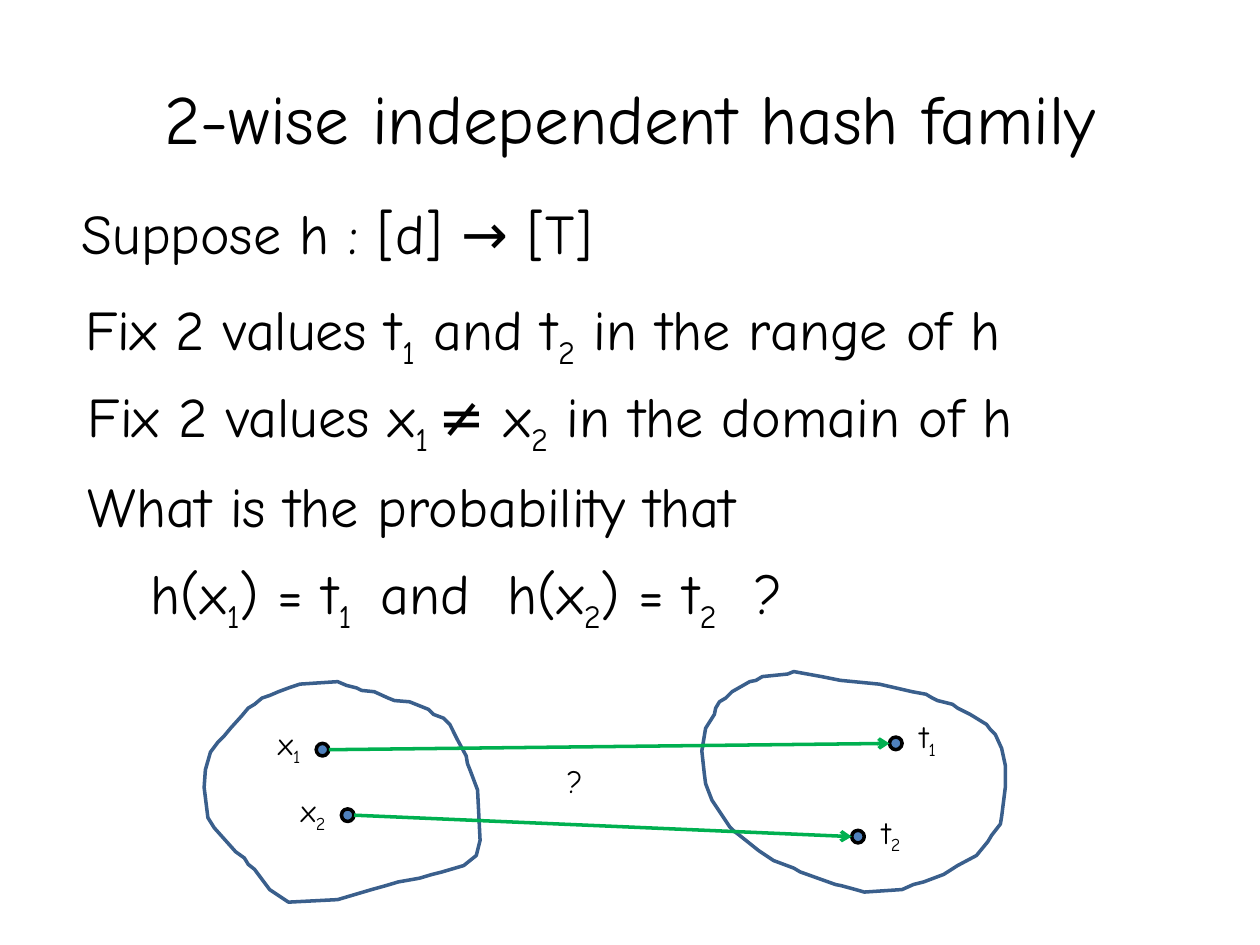
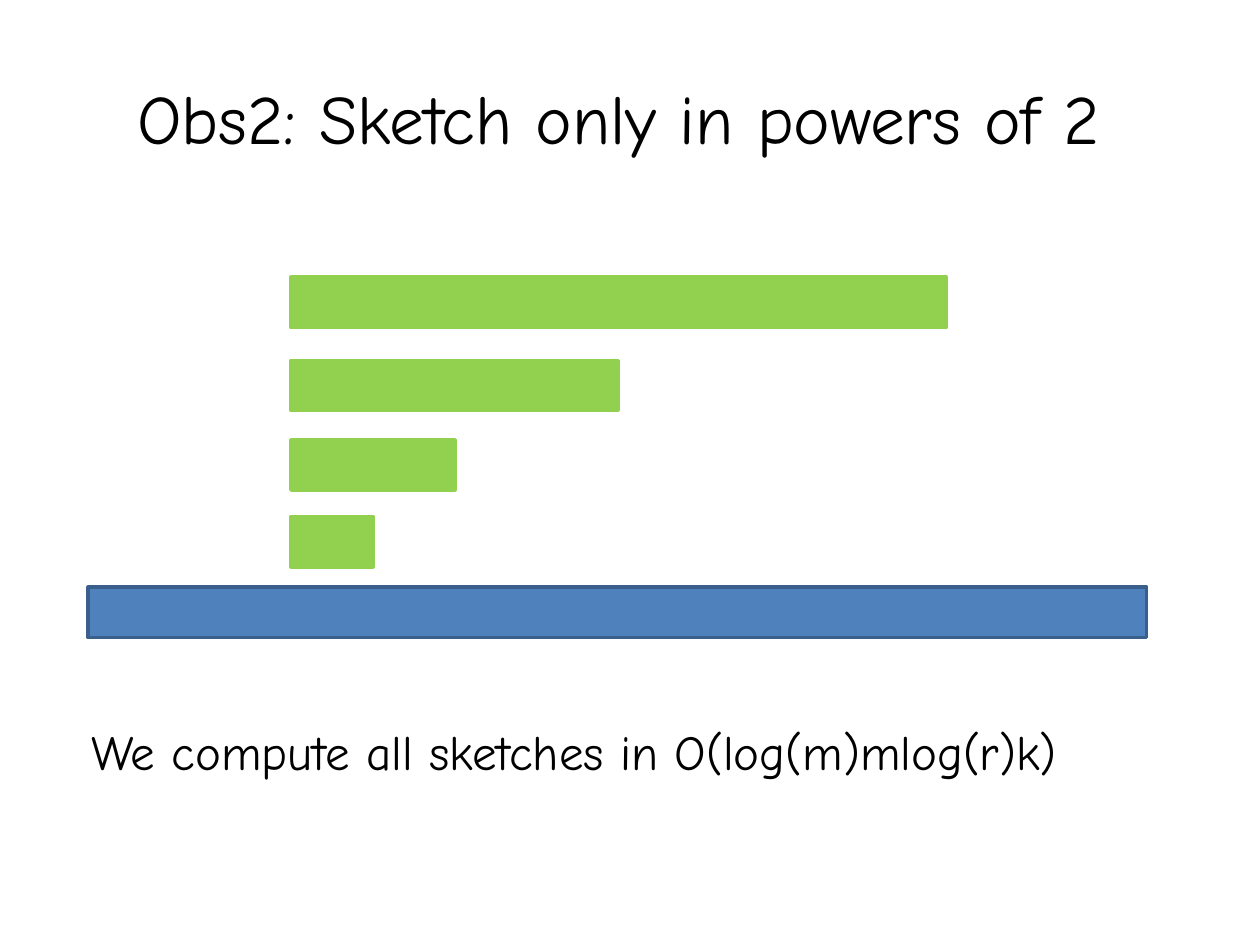
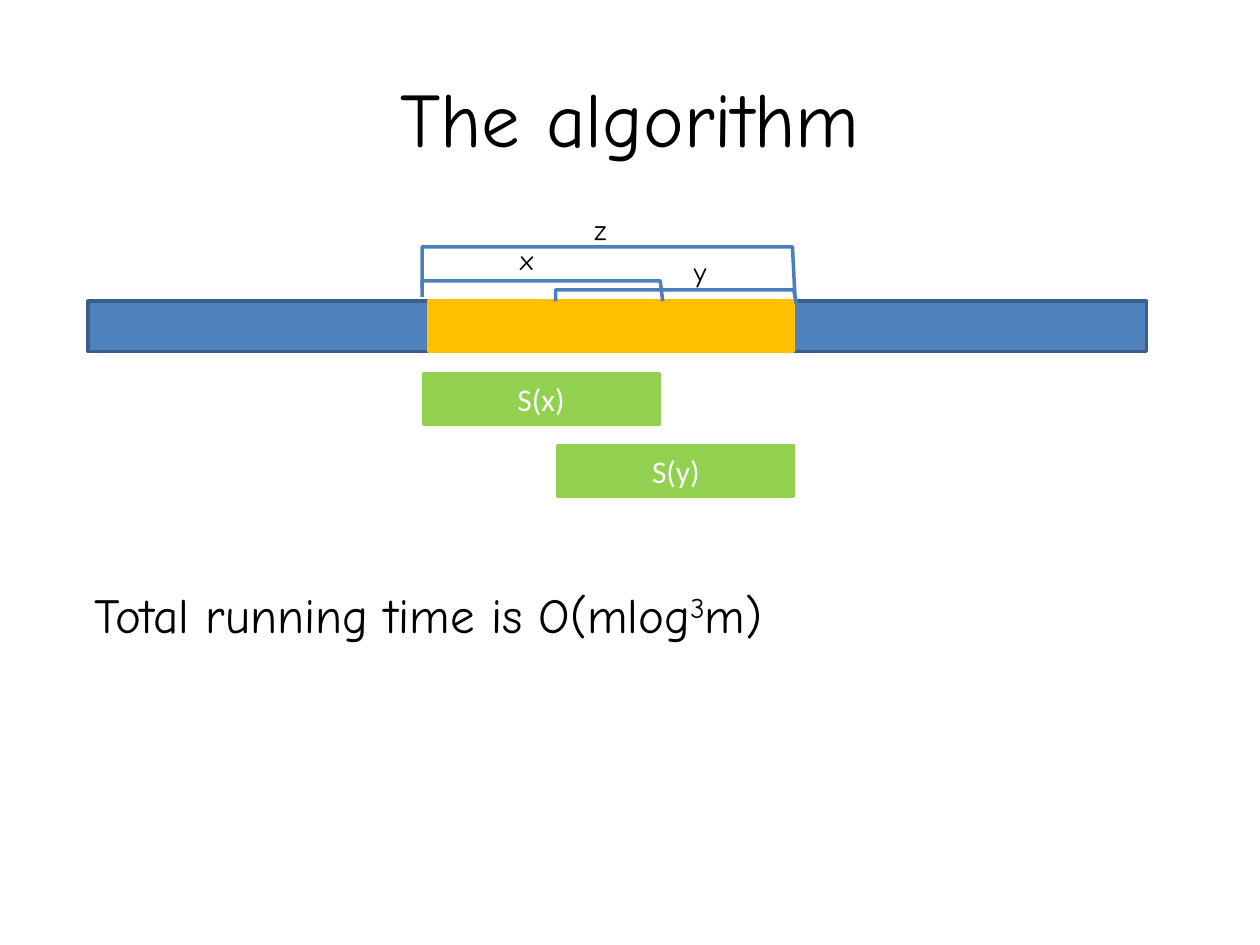
from lxml import etree
from pptx import Presentation
from pptx.dml.color import RGBColor
from pptx.enum.shapes import MSO_CONNECTOR, MSO_SHAPE
from pptx.enum.text import MSO_ANCHOR, MSO_AUTO_SIZE, PP_ALIGN
from pptx.oxml.ns import qn
from pptx.util import Pt

STRAIGHT = MSO_CONNECTOR.STRAIGHT
RECTANGLE = MSO_SHAPE.RECTANGLE
OVAL = MSO_SHAPE.OVAL
MIDDLE = MSO_ANCHOR.MIDDLE
CENTER = PP_ALIGN.CENTER
GROW = MSO_AUTO_SIZE.SHAPE_TO_FIT_TEXT

EMU_PER_PX = 9144
BODY_FONT = "Comic Neue"
BAR_FONT = "Calibri"
LINE_WIDTH = Pt(2)
SUBSCRIPT = -25000
SUPERSCRIPT = 30000
BAR_HEIGHT = 40
DOT_SIZE = 10
COLORS = {
    "text": "000000",
    "white": "FFFFFF",
    "blue": "4F81BD",
    "outline": "3A5F8C",
    "bracket": "4B7EBC",
    "green": "92D050",
    "arrow": "00B050",
    "amber": "FFC000",
}

DOMAIN_OUTLINE = [
    (151, 15), (146, 13), (135, 8), (125, 7), (121, 5), (113, 3), (106, 0),
    (76, 2), (67, 5), (59, 8), (52, 11), (46, 13), (40, 18), (35, 21),
    (30, 27), (21, 37), (16, 43), (11, 48), (5, 56), (1, 70), (0, 84),
    (3, 108), (8, 116), (25, 135), (32, 140), (35, 145), (40, 149),
    (52, 165), (67, 175), (106, 173), (133, 165), (144, 162), (154, 159),
    (171, 156), (181, 153), (189, 151), (206, 146), (216, 138), (219, 126),
    (217, 86), (211, 70), (209, 65), (208, 59), (201, 46), (195, 34),
    (190, 29), (182, 26), (178, 22), (163, 16),
]
RANGE_OUTLINE = [
    (69, 3), (49, 5), (44, 8), (39, 9), (25, 17), (20, 22), (15, 25),
    (12, 30), (11, 35), (4, 46), (1, 64), (3, 82), (4, 90), (9, 103),
    (15, 112), (23, 124), (27, 128), (31, 131), (46, 143), (58, 151),
    (74, 157), (79, 160), (93, 165), (107, 170), (112, 171), (123, 174),
    (130, 176), (160, 174), (169, 170), (177, 168), (193, 162), (204, 155),
    (219, 147), (228, 136), (231, 131), (238, 122), (239, 116), (242, 92),
    (242, 76), (239, 62), (234, 51), (230, 47), (227, 43), (214, 35),
    (204, 30), (200, 27), (188, 24), (184, 22), (179, 19), (168, 17),
    (155, 14), (142, 11), (111, 8), (96, 5), (74, 1),
]


def px(*lengths):
    return [length * EMU_PER_PX for length in lengths]


def color(name):
    return RGBColor.from_string(COLORS[name])


def style_line(line, name):
    line.color.rgb = color(name)
    line.width = LINE_WIDTH


def style_font(paragraph, size, name="text", font=BODY_FONT):
    paragraph.font.name = font
    paragraph.font.size = Pt(size)
    paragraph.font.color.rgb = color(name)


def add_text(slide, box, size, *parts, baseline=SUBSCRIPT, wrap=True):
    """Every second part is shifted off the baseline."""
    text_box = slide.shapes.add_textbox(*px(*box))
    frame = text_box.text_frame
    frame.word_wrap = wrap
    frame.auto_size = GROW
    paragraph = frame.paragraphs[0]
    style_font(paragraph, size)
    for index, part in enumerate(parts):
        run = paragraph.add_run()
        run.text = part
        if index % 2:
            run._r.get_or_add_rPr().set("baseline", str(baseline))
    return text_box


def add_title(slide, text, size=39.6):
    frame = add_text(slide, (50, 30, 900, 125), size, text).text_frame
    frame.auto_size = MSO_AUTO_SIZE.NONE
    frame.vertical_anchor = MIDDLE
    frame.paragraphs[0].alignment = CENTER


def add_figure(slide, kind, box, fill, line):
    shape = slide.shapes.add_shape(kind, *px(*box))
    shape.shadow.inherit = False
    shape.fill.solid()
    shape.fill.fore_color.rgb = color(fill)
    style_line(shape.line, line)
    return shape


def add_bar(slide, left, top, width, fill="green", line=None, text=""):
    box = (left, top, width, BAR_HEIGHT)
    shape = add_figure(slide, RECTANGLE, box, fill, line or fill)
    if text:
        frame = shape.text_frame
        frame.text = text
        frame.vertical_anchor = MIDDLE
        paragraph = frame.paragraphs[0]
        paragraph.alignment = CENTER
        style_font(paragraph, 18, "white", BAR_FONT)


def add_string_bar(slide, top):
    add_bar(slide, 70, top, 840, "blue", "outline")


def add_outline(slide, left, top, points, line, close):
    builder = slide.shapes.build_freeform(*points[0], scale=EMU_PER_PX)
    builder.add_line_segments(points[1:], close=close)
    shape = builder.convert_to_shape(*px(left, top))
    shape.shadow.inherit = False
    shape.fill.background()
    style_line(shape.line, line)


def add_bracket(slide, left, top, width, left_leg, right_leg):
    points = [(0, left_leg), (0, 0), (width, 0), (width + 2, right_leg)]
    add_outline(slide, left, top, points, "bracket", False)


def add_arrow(slide, start, end):
    connector = slide.shapes.add_connector(STRAIGHT, *px(*start, *end))
    style_line(connector.line, "arrow")
    line = connector.line._get_or_add_ln()
    etree.SubElement(line, qn("a:tailEnd"), type="arrow")
    etree.SubElement(connector._element.spPr, qn("a:effectLst"))


def add_point(slide, left, top, label_box, letter, index):
    box = (left, top, DOT_SIZE, DOT_SIZE)
    add_figure(slide, OVAL, box, "blue", "text")
    add_text(slide, label_box, 18, letter, index, wrap=False)


def add_mapping(slide, left, top):
    add_outline(slide, left, top + 9, DOMAIN_OUTLINE, "outline", True)
    add_outline(slide, left + 394, top, RANGE_OUTLINE, "outline", True)
    pairs = [
        ("1", (89, 58), (49, 38, 43, 40), (544, 53), (558, 32, 40, 40)),
        ("2", (109, 110), (67, 91, 45, 40), (514, 127), (528, 108, 42, 40)),
    ]
    half = DOT_SIZE // 2
    for index, source, source_label, target, target_label in pairs:
        ends = [("x", source, source_label), ("t", target, target_label)]
        for letter, (x, y), (label_x, label_y, width, height) in ends:
            label_box = (left + label_x, top + label_y, width, height)
            add_point(slide, left + x, top + y, label_box, letter, index)
        add_arrow(
            slide,
            (left + source[0] + DOT_SIZE, top + source[1] + half),
            (left + target[0], top + target[1] + half),
        )
    add_text(slide, (left + 278, top + 68, 38, 40), 18, "?")


def build_hash_family(slide):
    add_title(slide, "2-wise independent hash family")
    statements = [
        (55, 153, ["Suppose h : [d] → [T]"]),
        (58, 229, ["Fix 2 values t", "1", " and t", "2", " in the range of h"]),
        (60, 298, ["Fix 2 values x", "1 ", "≠ x", "2", " in the domain of h"]),
        (60, 369, ["What is the probability that"]),
        (110, 438, ["h(x", "1", ") = t", "1 ", " and  h(x", "2", ") = t", "2", "  ?"]),
    ]
    for left, top, parts in statements:
        add_text(slide, (left, top, 890, 64), 32, *parts)
    add_mapping(slide, 162, 532)


def build_powers_of_two(slide):
    add_title(slide, "Obs2: Sketch only in powers of 2 ")
    add_string_bar(slide, 466)
    for power, top in enumerate((220, 286, 349, 410)):
        add_bar(slide, 231, top, 520 // 2**power)
    add_text(slide, (63, 568, 881, 57), 28,
             "We compute all sketches in O(log(m)mlog(r)k)")


def add_overlap_diagram(slide, left, top):
    add_string_bar(slide, top + 75)
    add_bar(slide, left + 5, top + 75, 290, "amber")
    add_bar(slide, left + 1, top + 133, 187, text="S(x)")
    add_bar(slide, left + 108, top + 190, 187, text="S(y)")
    add_bracket(slide, left, top + 59, 189, 13, 16)
    add_bracket(slide, left + 106, top + 66, 189, 9, 11)
    add_bracket(slide, left, top + 32, 294, 33, 40)
    for name, x, y in (("x", 68, 24), ("y", 206, 33), ("z", 127, 0)):
        add_text(slide, (left + x, top + y, 46, 37), 16, name)


def build_algorithm(slide):
    add_title(slide, "The algorithm", 44)
    add_text(slide, (65, 459, 958, 57), 28,
             "Total running time is O(mlog", "3", "m)", baseline=SUPERSCRIPT)
    add_overlap_diagram(slide, 335, 164)


def main():
    presentation = Presentation()
    presentation.slide_width, presentation.slide_height = px(1000, 750)
    blank = presentation.slide_layouts[6]
    for build in (build_hash_family, build_powers_of_two, build_algorithm):
        build(presentation.slides.add_slide(blank))
    presentation.save("out.pptx")


if __name__ == "__main__":
    main()
